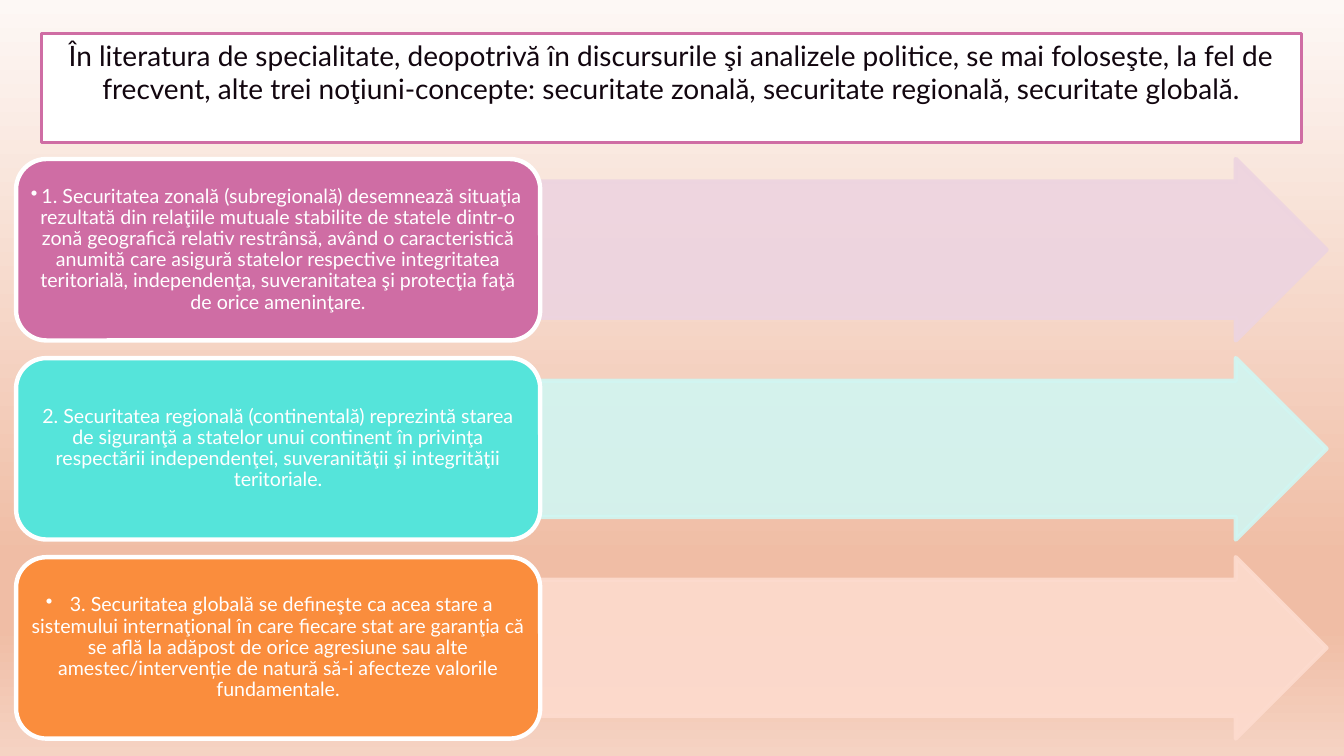
from lxml import etree
from pptx import Presentation
from pptx.dml.color import RGBColor
from pptx.enum import shapes, text
from pptx.oxml.ns import qn
from pptx.util import Pt

WHITE = RGBColor(0xFF, 0xFF, 0xFF)
INK = RGBColor(0x12, 0x06, 0x0F)
PINK = RGBColor(0xCF, 0x6D, 0xA4)
ROSE = RGBColor(0xED, 0xD4, 0xE0)
TEAL = RGBColor(0x55, 0xE4, 0xDA)
MINT = RGBColor(0xD1, 0xF6, 0xF2)
ORANGE = RGBColor(0xFA, 0x8D, 0x3D)
PEACH = RGBColor(0xFD, 0xDB, 0xCE)
CREAM = RGBColor(0xFD, 0xF8, 0xF5)
SAND = RGBColor(0xF0, 0xBD, 0xA5)
BLUSH = RGBColor(0xF5, 0xD3, 0xC3)
STOPS = [(0, CREAM), (74, SAND), (83, SAND), (100, BLUSH)]

TITLE = (
    "În literatura de specialitate, deopotrivă în discursurile şi analizele "
    "politice, se mai foloseşte, la fel de frecvent, alte trei "
    "noţiuni-concepte: securitate zonală, securitate regională, "
    "securitate globală."
)
# Text, box colour, arrow colour, bullet
ROWS = [
    ("1. Securitatea zonală (subregională) desemnează situaţia rezultată din "
     "relaţiile mutuale stabilite de statele dintr-o zonă geografică relativ "
     "restrânsă, având o caracteristică anumită care asigură statelor "
     "respective integritatea teritorială, independenţa, suveranitatea şi "
     "protecţia faţă de orice ameninţare.", PINK, ROSE, True),
    ("2. Securitatea regională (continentală) reprezintă starea de siguranţă "
     "a statelor unui continent în privinţa respectării independenţei, "
     "suveranităţii şi integrităţii teritoriale.", TEAL, MINT, False),
    ("3. Securitatea globală se defineşte ca acea stare a sistemului "
     "internaţional în care fiecare stat are garanţia că se află la adăpost "
     "de orice agresiune sau alte amestec/intervenție de natură să-i "
     "afecteze valorile fundamentale.", ORANGE, PEACH, True),
]
LEFT, TOP, STEP = 11.5, 113.6, 142.2
BOX_W, ARROW_W, ROW_H = 374.4, 561.6, 129.6


def paint_back(slide):
    fill = slide.background.fill
    fill.gradient()
    fill.gradient_angle = 270
    stops = slide.element.find(".//" + qn("a:gsLst"))
    for old in list(stops):
        stops.remove(old)
    for pos, color in STOPS:
        stop = etree.SubElement(stops, qn("a:gs"), pos=str(pos * 1000))
        etree.SubElement(stop, qn("a:srgbClr"), val=str(color))


def add_block(slide, kind, area, fill, line, width):
    block = slide.shapes.add_shape(kind, *map(Pt, area))
    block.shadow.inherit = False
    block.fill.solid()
    block.fill.fore_color.rgb = fill
    block.line.color.rgb = line
    block.line.width = Pt(width)
    return block


def add_arrow(slide, area, color):
    """Add a slightly see-through arrow with a wide shaft."""
    arrow = add_block(slide, shapes.MSO_SHAPE.RIGHT_ARROW, area, color, color, 3.15)
    arrow.adjustments[0] = 0.75
    arrow.adjustments[1] = 0.5
    for tint in arrow.element.spPr.iter(qn("a:srgbClr")):
        etree.SubElement(tint, qn("a:alpha"), val="90000")


def put_text(block, words, size, color, pads, anchor, spacing=1.0, bullet=False):
    """Write centred text; pads are the side and the top/bottom margins."""
    frame = block.text_frame
    frame.word_wrap = True
    frame.vertical_anchor = anchor
    frame.margin_left = frame.margin_right = Pt(pads[0])
    frame.margin_top = frame.margin_bottom = Pt(pads[1])
    para = frame.paragraphs[0]
    para.alignment = text.PP_ALIGN.CENTER
    para.line_spacing = spacing
    if bullet:
        etree.SubElement(para._p.get_or_add_pPr(), qn("a:buChar"), char="•")
    run = para.add_run()
    run.text = words
    run.font.name = "Lato"
    run.font.size = Pt(size)
    run.font.color.rgb = color


def add_row(slide, top, words, fill, tint, bullet):
    add_arrow(slide, (LEFT + BOX_W, top, ARROW_W, ROW_H), tint)
    box = add_block(slide, shapes.MSO_SHAPE.ROUNDED_RECTANGLE,
                    (LEFT, top, BOX_W, ROW_H), fill, WHITE, 3.15)
    put_text(box, words, 14, WHITE, (4.3, 2.2), text.MSO_ANCHOR.MIDDLE,
             spacing=0.9, bullet=bullet)


def main():
    deck = Presentation()
    deck.slide_width, deck.slide_height = Pt(960), Pt(540)
    slide = deck.slides.add_slide(deck.slide_layouts[6])
    paint_back(slide)
    title = add_block(slide, shapes.MSO_SHAPE.RECTANGLE,
                      (29.5, 23.8, 900, 77.8), WHITE, PINK, 2.25)
    put_text(title, TITLE, 20, INK, (9, 3.6), text.MSO_ANCHOR.TOP)
    for i, row in enumerate(ROWS):
        add_row(slide, TOP + i * STEP, *row)
    deck.save("out.pptx")


if __name__ == "__main__":
    main()
